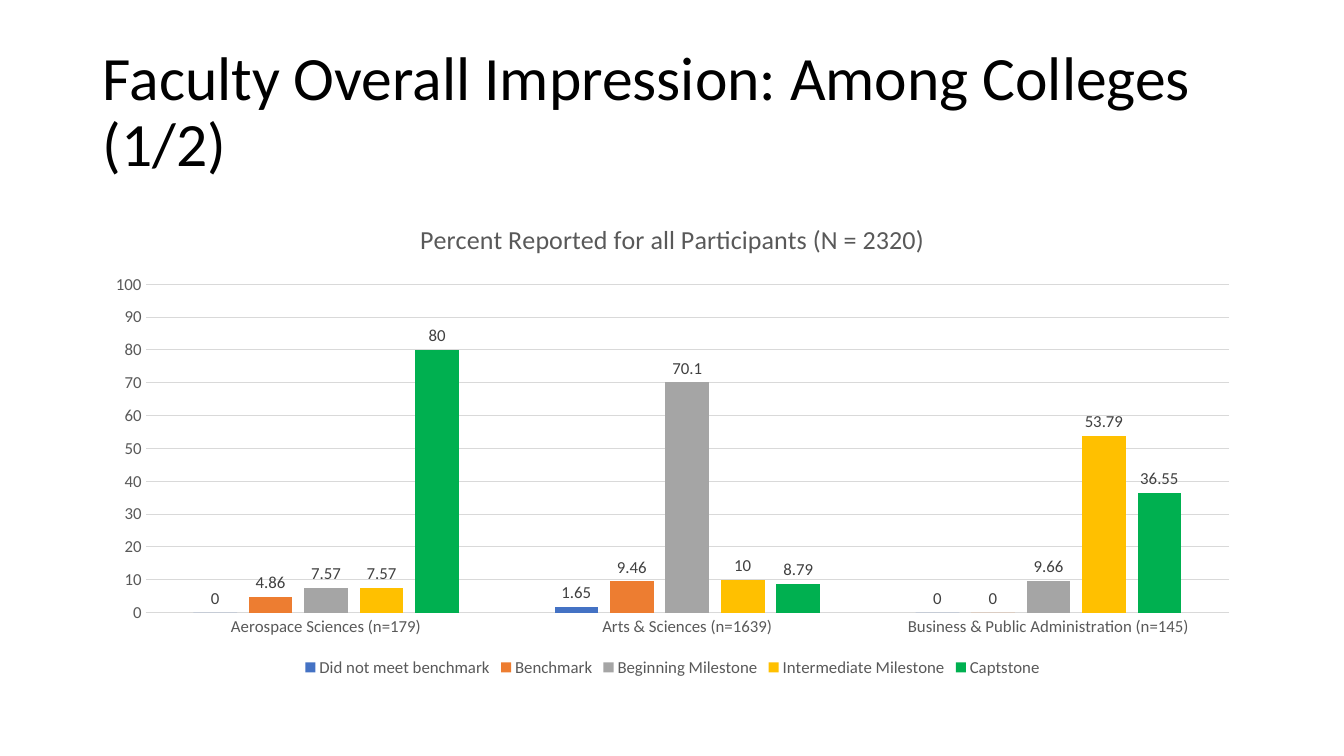
from pptx import Presentation
from pptx.chart.data import CategoryChartData
from pptx.dml.color import RGBColor
from pptx.enum.chart import (XL_CHART_TYPE, XL_LABEL_POSITION,
                             XL_LEGEND_POSITION, XL_TICK_MARK)
from pptx.enum.text import MSO_ANCHOR, MSO_AUTO_SIZE, PP_ALIGN
from pptx.util import Inches, Pt

COLLEGES = ["Aerospace Sciences (n=179)", "Arts & Sciences (n=1639)",
            "Business & Public Administration (n=145)"]
RATINGS = [
    ("Did not meet benchmark", (0, 1.65, 0), "4472C4"),
    ("Benchmark", (4.86, 9.46, 0), "ED7D31"),
    ("Beginning Milestone", (7.57, 70.1, 9.66), "A5A5A5"),
    ("Intermediate Milestone", (7.57, 10, 53.79), "FFC000"),
    ("Captstone", (80, 8.79, 36.55), "00B050"),
]


def rgb(color):
    return RGBColor.from_string(color)


class SlideBuilder:
    font_name = "Calibri"
    text_color = "595959"
    label_color = "404040"
    line_color = "D9D9D9"

    def __init__(self, slide):
        self.slide = slide

    def style_font(self, font, size, color):
        font.name = self.font_name
        font.size = Pt(size)
        font.bold = False
        font.color.rgb = rgb(color)

    def style_line(self, line):
        line.color.rgb = rgb(self.line_color)
        line.width = Pt(0.75)

    def title(self, text, left, top, width, height):
        sp = self.slide.shapes.title
        sp.left, sp.top = Inches(left), Inches(top)
        sp.width, sp.height = Inches(width), Inches(height)
        tf = sp.text_frame
        tf.word_wrap = True
        tf.auto_size = MSO_AUTO_SIZE.NONE
        tf.vertical_anchor = MSO_ANCHOR.MIDDLE
        p = tf.paragraphs[0]
        p.alignment = PP_ALIGN.LEFT
        p.line_spacing = 0.9
        r = p.add_run()
        r.text = text
        self.style_font(r.font, 44, "000000")

    def column_chart(self, heading, categories, series, left, top, width, height):
        data = CategoryChartData()
        data.categories = categories
        for name, values, _ in series:
            data.add_series(name, values)
        chart = self.slide.shapes.add_chart(
            XL_CHART_TYPE.COLUMN_CLUSTERED, Inches(left), Inches(top),
            Inches(width), Inches(height), data).chart
        self.style_font(chart.font, 10, "000000")

        # Heading and legend
        chart.has_title = True
        chart.chart_title.include_in_layout = False
        r = chart.chart_title.text_frame.paragraphs[0].add_run()
        r.text = heading
        self.style_font(r.font, 18.6, self.text_color)
        chart.has_legend = True
        chart.legend.position = XL_LEGEND_POSITION.BOTTOM
        chart.legend.include_in_layout = False
        self.style_font(chart.legend.font, 12, self.text_color)

        # Axes
        for axis in (chart.category_axis, chart.value_axis):
            axis.major_tick_mark = axis.minor_tick_mark = XL_TICK_MARK.NONE
            self.style_font(axis.tick_labels.font, 12, self.text_color)
        self.style_line(chart.category_axis.format.line)
        axis = chart.value_axis
        axis.minimum_scale, axis.maximum_scale, axis.major_unit = 0, 100, 10
        axis.format.line.fill.background()
        self.style_line(axis.major_gridlines.format.line)

        # Columns and value labels
        plot = chart.plots[0]
        plot.gap_width, plot.overlap = 219, -27
        plot.vary_by_categories = False
        for column, (_, _, color) in zip(plot.series, series):
            column.invert_if_negative = False
            column.format.fill.solid()
            column.format.fill.fore_color.rgb = rgb(color)
            labels = column.data_labels
            labels.show_value = True
            labels.position = XL_LABEL_POSITION.OUTSIDE_END
            self.style_font(labels.font, 12, self.label_color)


def main():
    prs = Presentation()
    prs.slide_width, prs.slide_height = Inches(13.33), Inches(7.5)
    s = SlideBuilder(prs.slides.add_slide(prs.slide_layouts[5]))
    s.title("Faculty Overall Impression: Among Colleges (1/2)",
            0.92, 0.4, 11.5, 1.45)
    s.column_chart("Percent Reported for all Participants (N = 2320)",
                   COLLEGES, RATINGS, 0.92, 2, 11.5, 4.76)
    prs.save("out.pptx")


if __name__ == "__main__":
    main()
